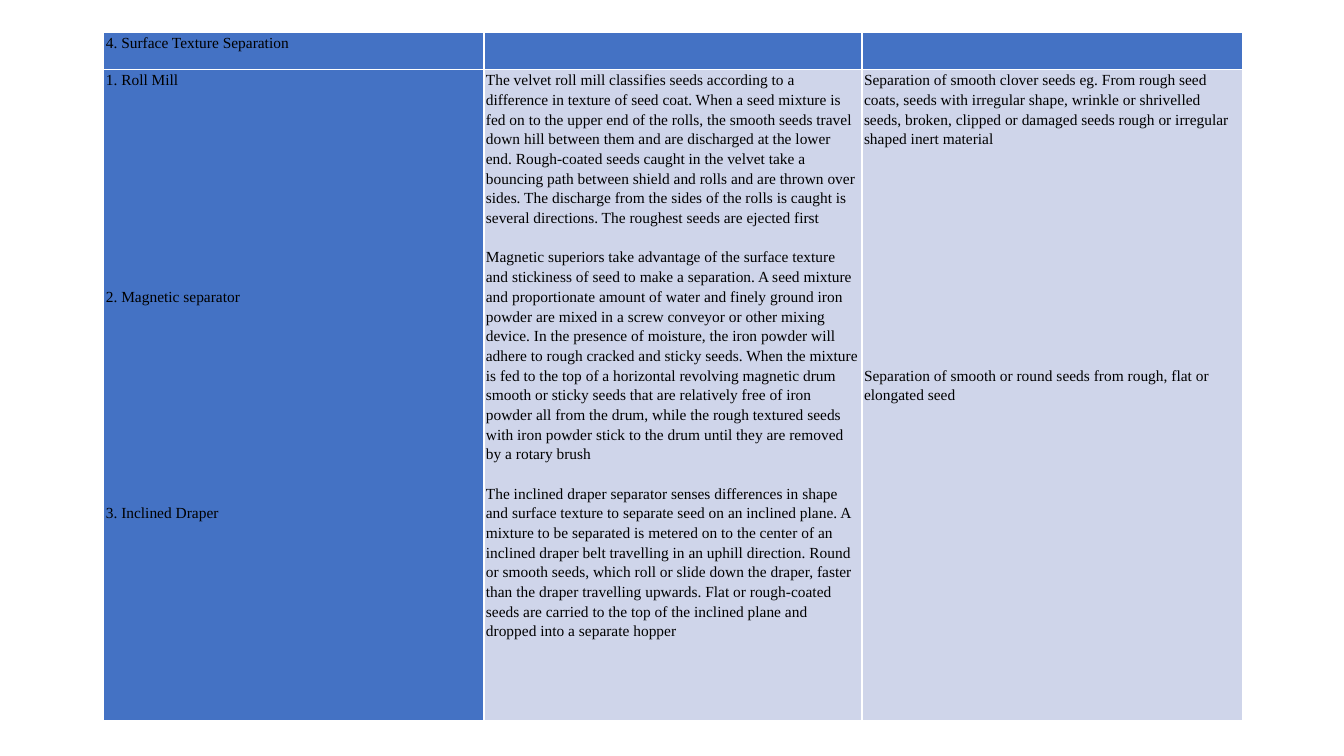
from dataclasses import dataclass

from lxml import etree
from pptx import Presentation
from pptx import util as u
from pptx.dml.color import RGBColor
from pptx.oxml import ns
from pptx.table import _Cell


@dataclass(frozen=True)
class Theme:
    heading_fill: str = "4472C4"
    body_fill: str = "CFD5EA"
    border: str = "FFFFFF"
    ink: str = "000000"
    font: str = "Times New Roman"
    size: float = 11
    line_spacing: float = 1.15
    line_pitch: float = 14.06
    border_width: float = 1


@dataclass(frozen=True)
class CellSpec:
    row: int
    column: int
    fill: str
    paragraphs: tuple[str, ...] = ()
    gap_lines: int = 0


THEME = Theme()
COLUMN_WIDTHS = (3.77, 3.75, 3.77)
ROW_HEIGHTS = (0.37, 6.46)

ROLL_MILL = (
    "The velvet roll mill classifies seeds according to a difference in texture of seed coat. "
    "When a seed mixture is fed on to the upper end of the rolls, the smooth seeds travel down "
    "hill between them and are discharged at the lower end. Rough-coated seeds caught in the "
    "velvet take a bouncing path between shield and rolls and are thrown over sides. The "
    "discharge from the sides of the rolls is caught is several directions. The roughest seeds "
    "are ejected first"
)
MAGNETIC_SEPARATOR = (
    "Magnetic superiors take advantage of the surface texture and stickiness of seed to make a "
    "separation. A seed mixture and proportionate amount of water and finely ground iron powder "
    "are mixed in a screw conveyor or other mixing device. In the presence of moisture, the iron "
    "powder will adhere to rough cracked and sticky seeds. When the mixture is fed to the top of "
    "a horizontal revolving magnetic drum smooth or sticky seeds that are relatively free of iron "
    "powder all from the drum, while the rough textured seeds with iron powder stick to the drum "
    "until they are removed by a rotary brush"
)
INCLINED_DRAPER = (
    "The inclined draper separator senses differences in shape and surface texture to separate "
    "seed on an inclined plane. A mixture to be separated is metered on to the center of an "
    "inclined draper belt travelling in an uphill direction. Round or smooth seeds, which roll or "
    "slide down the draper, faster than the draper travelling upwards. Flat or rough-coated seeds "
    "are carried to the top of the inclined plane and dropped into a separate hopper"
)
CLOVER_USE = (
    "Separation of smooth clover seeds eg. From rough seed coats, seeds with irregular shape, "
    "wrinkle or shrivelled seeds, broken, clipped or damaged seeds rough or irregular shaped "
    "inert material"
)
ROUND_SEED_USE = "Separation of smooth or round seeds from rough, flat or elongated seed"

CELLS = (
    CellSpec(0, 0, THEME.heading_fill, ("4. Surface Texture Separation",)),
    CellSpec(0, 1, THEME.heading_fill),
    CellSpec(0, 2, THEME.heading_fill),
    CellSpec(1, 0, THEME.heading_fill,
             ("1. Roll Mill", "2. Magnetic separator", "3. Inclined Draper"), 10),
    CellSpec(1, 1, THEME.body_fill, (ROLL_MILL, MAGNETIC_SEPARATOR, INCLINED_DRAPER), 1),
    CellSpec(1, 2, THEME.body_fill, (CLOVER_USE, ROUND_SEED_USE), 11),
)


def add_borders(cell: _Cell, color: str, width: float) -> None:
    properties = cell._tc.get_or_add_tcPr()
    for side in ("L", "R", "T", "B"):
        line = etree.SubElement(properties, ns.qn(f"a:ln{side}"), w=str(u.Pt(width)))
        fill = etree.SubElement(line, ns.qn("a:solidFill"))
        etree.SubElement(fill, ns.qn("a:srgbClr"), val=color)


def write_text(cell: _Cell, paragraphs: tuple[str, ...], *, gap: float, font: str,
               size: float, color: str, line_spacing: float) -> None:
    frame = cell.text_frame
    for index, words in enumerate(paragraphs):
        para = frame.add_paragraph() if index else frame.paragraphs[0]
        para.line_spacing = line_spacing
        if index:
            para.space_before = u.Pt(gap)
        span = para.add_run()
        span.text = words
        span.font.name = font
        span.font.size = u.Pt(size)
        span.font.color.rgb = RGBColor.from_string(color)


def draw_cell(cell: _Cell, item: CellSpec) -> None:
    cell.margin_left = cell.margin_right = u.Inches(0.02)
    cell.margin_top = cell.margin_bottom = u.Inches(0)
    add_borders(cell, THEME.border, THEME.border_width)
    cell.fill.solid()
    cell.fill.fore_color.rgb = RGBColor.from_string(item.fill)
    write_text(cell, item.paragraphs, gap=item.gap_lines * THEME.line_pitch, font=THEME.font,
               size=THEME.size, color=THEME.ink, line_spacing=THEME.line_spacing)


def main() -> None:
    deck = Presentation()
    deck.slide_width, deck.slide_height = u.Inches(13.33), u.Inches(7.5)
    page = deck.slides.add_slide(deck.slide_layouts[6])
    table = page.shapes.add_table(
        len(ROW_HEIGHTS), len(COLUMN_WIDTHS), u.Inches(1.03), u.Inches(0.32),
        u.Inches(sum(COLUMN_WIDTHS)), u.Inches(sum(ROW_HEIGHTS))).table
    table.first_row = table.horz_banding = False
    for column, width in zip(table.columns, COLUMN_WIDTHS):
        column.width = u.Inches(width)
    for row, height in zip(table.rows, ROW_HEIGHTS):
        row.height = u.Inches(height)
    for item in CELLS:
        draw_cell(table.cell(item.row, item.column), item)
    deck.save("out.pptx")


if __name__ == "__main__":
    main()
